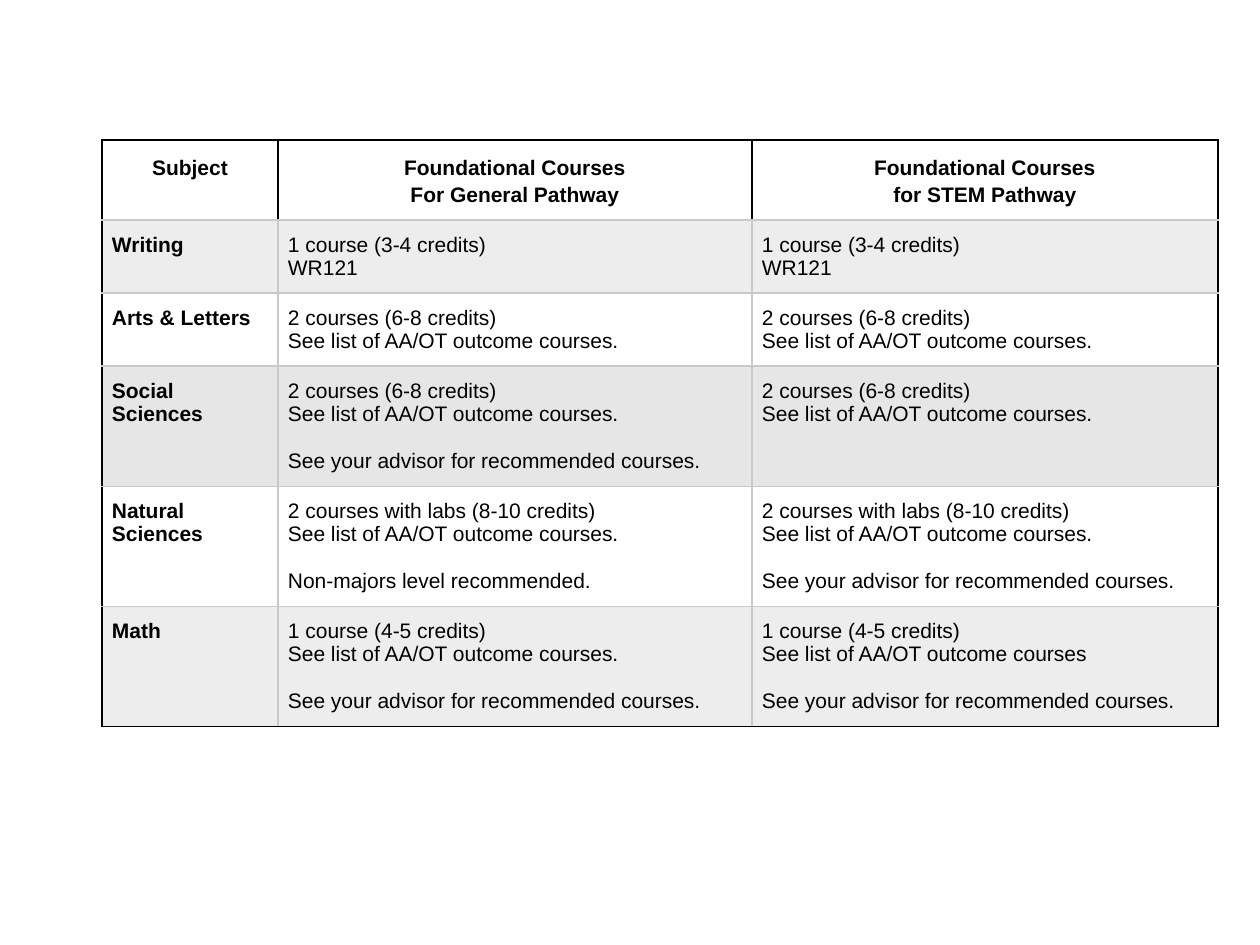
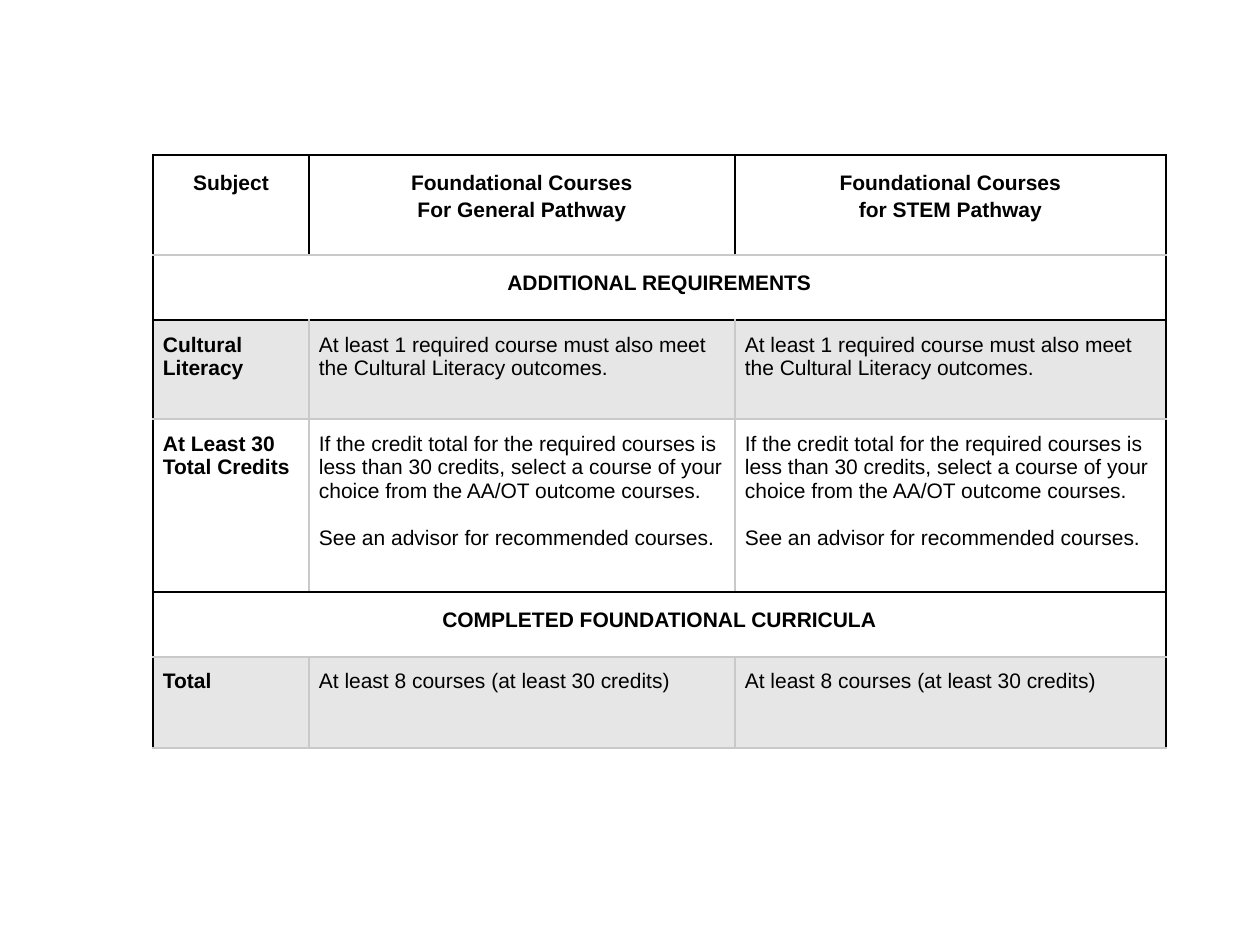
from dataclasses import dataclass
from lxml import etree
from pptx import Presentation
from pptx.dml.color import RGBColor
from pptx.enum.text import PP_ALIGN
from pptx.oxml.ns import qn
from pptx.util import Pt

CENTER, LEFT = PP_ALIGN.CENTER, PP_ALIGN.LEFT
PX = 914400 / 126


@dataclass(frozen=True)
class Theme:
    font: str = "Arial"
    size: float = 12
    gap: float = 13.4
    heading_spacing: float = 1.15
    black: str = "000000"
    grey: str = "C9C9C9"
    white: str = "FFFFFF"
    light: str = "EDEDED"
    shade: str = "E7E6E6"
    thin: float = 1
    thick: float = 1.5


THEME = Theme()
BLACK, GREY = THEME.black, THEME.grey


def px(length):
    return round(length * PX)


def draw_edges(cell, edges):
    properties = cell._tc.get_or_add_tcPr()
    for position, (side, (color, width)) in enumerate(edges.items()):
        line = etree.Element(qn(f"a:ln{side}"), w=str(Pt(width)))
        paint = etree.SubElement(line, qn("a:solidFill"))
        etree.SubElement(paint, qn("a:srgbClr"), val=color)
        properties.insert(position, line)


OUTCOMES = "See list of AA/OT outcome courses."
ADVISOR = "See your advisor for recommended courses."
WRITING = "1 course (3-4 credits)\nWR121"
TWO_COURSES = f"2 courses (6-8 credits)\n{OUTCOMES}"
LABS = f"2 courses with labs (8-10 credits)\n{OUTCOMES}"
MATH = "1 course (4-5 credits)\nSee list of AA/OT outcome courses"
LITERACY = "At least 1 required course must also meet the Cultural Literacy outcomes."
CREDITS = (
    "If the credit total for the required courses is less than 30 credits, "
    "select a course of your choice from the AA/OT outcome courses."
    "\n\nSee an advisor for recommended courses."
)
TOTAL = "At least 8 courses (at least 30 credits)"
HEADINGS = (
    "Subject",
    "Foundational Courses\nFor General Pathway",
    "Foundational Courses\nfor STEM Pathway",
)

pathway_tables = [
    {
        "corner": (102, 140),
        "columns": (176, 474, 466),
        "rules": (BLACK, GREY, GREY, GREY, GREY, GREY, BLACK),
        "rows": [
            (80, THEME.white, HEADINGS),
            (73, THEME.light, ("Writing", WRITING, WRITING)),
            (72, None, ("Arts & Letters", TWO_COURSES, TWO_COURSES)),
            (119, THEME.shade, ("Social Sciences", f"{TWO_COURSES}\n\n{ADVISOR}", TWO_COURSES)),
            (119, None, ("Natural Sciences", f"{LABS}\n\nNon-majors level recommended.", f"{LABS}\n\n{ADVISOR}")),
            (119, THEME.light, ("Math", f"{MATH}.\n\n{ADVISOR}", f"{MATH}\n\n{ADVISOR}")),
        ],
    },
    {
        "corner": (153, 155),
        "columns": (156, 426, 431),
        "rules": (BLACK, GREY, BLACK, GREY, BLACK, GREY, GREY),
        "rows": [
            (100, THEME.white, HEADINGS),
            (65, None, ("ADDITIONAL REQUIREMENTS",)),
            (99, THEME.shade, ("Cultural Literacy", LITERACY, LITERACY)),
            (173, None, ("At Least 30 Total Credits", CREDITS, CREDITS)),
            (65, None, ("COMPLETED FOUNDATIONAL CURRICULA",)),
            (91, THEME.shade, ("Total", TOTAL, TOTAL)),
        ],
    },
]

deck = Presentation()
deck.slide_width, deck.slide_height = px(1260), px(945)

for pathway in pathway_tables:
    slide = deck.slides.add_slide(deck.slide_layouts[6])
    columns, rows, rules = pathway["columns"], pathway["rows"], pathway["rules"]
    left, top = pathway["corner"]
    requirements = slide.shapes.add_table(
        len(rows), len(columns), px(left), px(top),
        px(sum(columns)), px(sum(height for height, _, _ in rows)),
    ).table
    requirements.first_row = requirements.horz_banding = False
    for column, width in zip(requirements.columns, columns):
        column.width = px(width)

    for r, (height, fill, texts) in enumerate(rows):
        requirements.rows[r].height = px(height)
        is_section = len(texts) == 1
        is_heading = r == 0 or is_section
        if is_section:
            requirements.cell(r, 0).merge(requirements.cell(r, len(columns) - 1))
        inner = BLACK if is_heading else GREY
        verticals = (BLACK, inner, inner, BLACK)

        for c in range(len(columns)):
            cell = requirements.cell(r, c)
            insets = {"margin_left": 10, "margin_right": 10, "margin_top": 13, "margin_bottom": 13}
            for name, inset in insets.items():
                setattr(cell, name, px(inset))
            if fill:
                cell.fill.solid()
                cell.fill.fore_color.rgb = RGBColor.from_string(fill)
            else:
                cell.fill.background()
            draw_edges(cell, {
                "L": (verticals[c], THEME.thin),
                "R": (verticals[c + 1], THEME.thin),
                "T": (rules[r], THEME.thick if r == 1 else THEME.thin),
                "B": (rules[r + 1], THEME.thick if r == 0 else THEME.thin),
            })

        for c, text in enumerate(texts):
            frame = requirements.cell(r, c).text_frame
            paragraph = frame.paragraphs[0]
            for b, block in enumerate(text.split("\n\n")):
                for n, line in enumerate(block.split("\n")):
                    if b or n:
                        paragraph = frame.add_paragraph()
                    if b and n == 0:
                        paragraph.space_before = Pt(THEME.gap)
                    paragraph.alignment = CENTER if is_heading else LEFT
                    if is_heading:
                        paragraph.line_spacing = THEME.heading_spacing
                    run = paragraph.add_run()
                    run.text = line
                    style = {"name": THEME.font, "size": Pt(THEME.size), "bold": is_heading or c == 0}
                    for name, setting in style.items():
                        setattr(run.font, name, setting)
                    run.font.color.rgb = RGBColor.from_string(BLACK)

deck.save("out.pptx")
